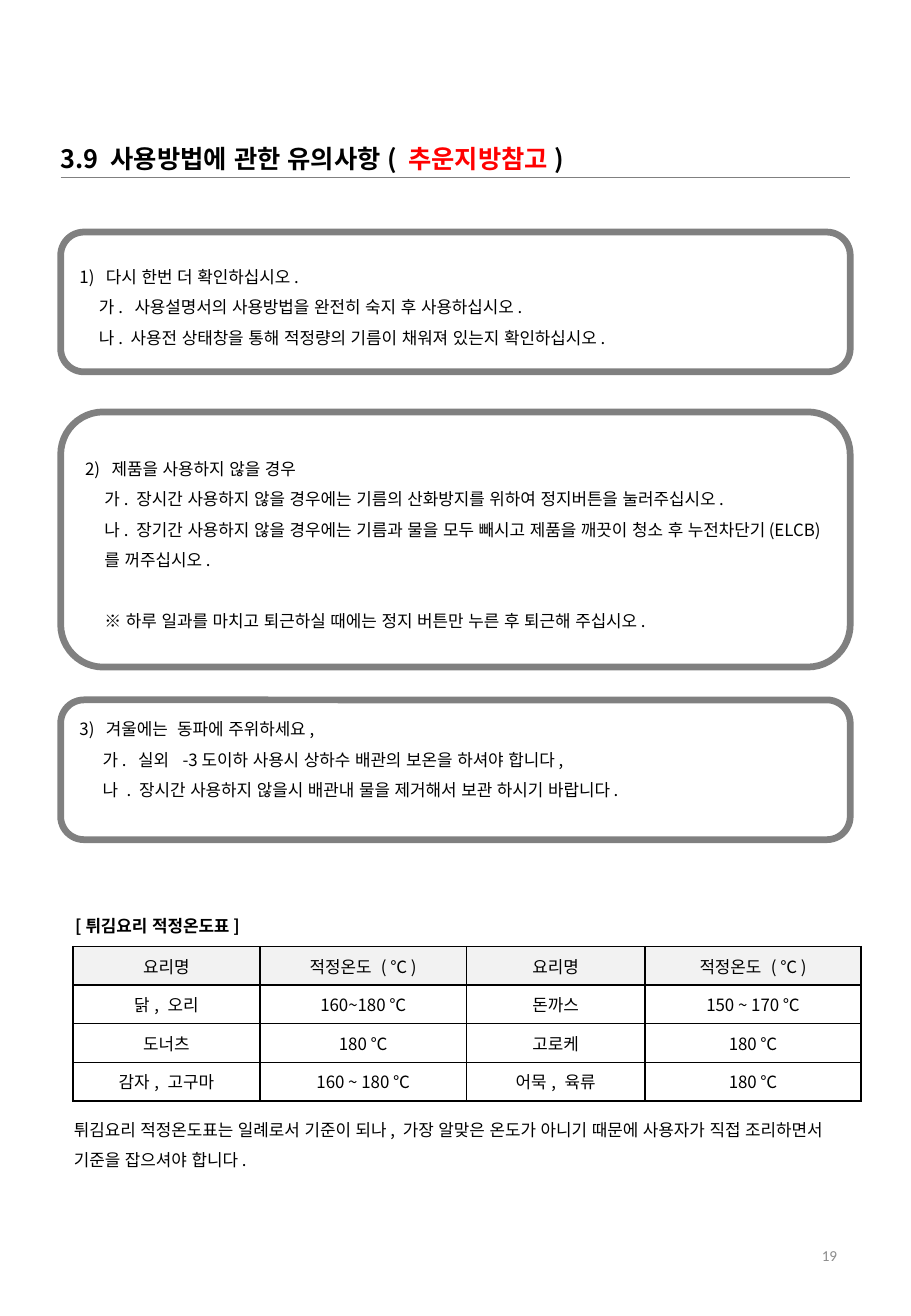
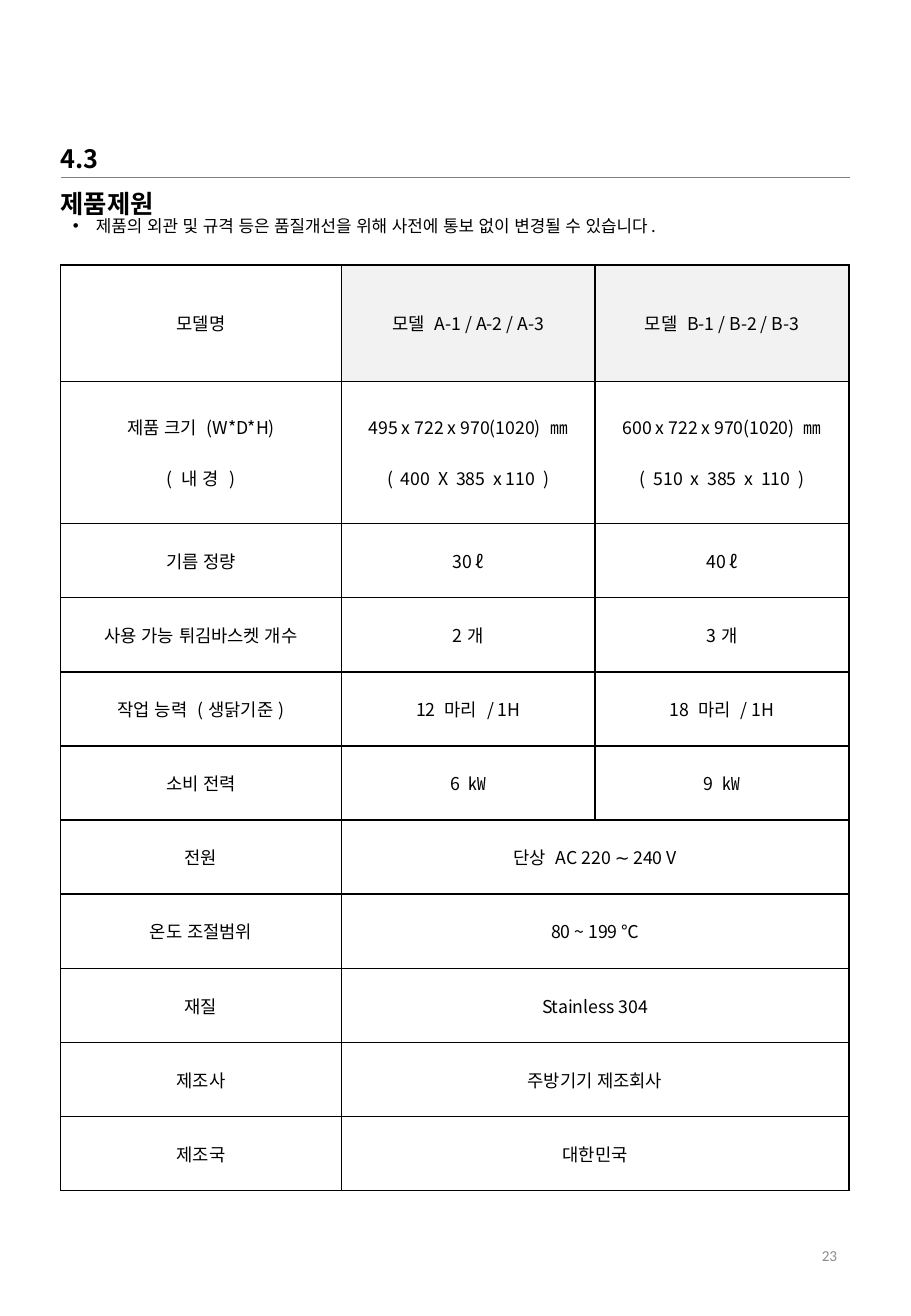
from pptx import Presentation
from pptx import util as u
from pptx.dml.color import RGBColor
from pptx.enum import dml, lang, shapes, text
from pptx.oxml import ns
from lxml import etree

COLORS = {"ink": "000000", "alert": "FF0000", "frame": "808080",
          "header": "F2F2F2", "number": "8C8C8C"}
KOREAN = "Noto Sans CJK KR"
LEFT, WIDTH = 0.5, 6.5
BODY = {"size": u.Pt(10), "name": KOREAN, "bold": False}
LABEL = {**BODY, "bold": True}
TITLE = {"size": u.Pt(15), "name": KOREAN, "bold": True}
SPEC = {**BODY, "size": u.Pt(10.5)}
NUMBER = {"size": u.Pt(9), "name": "Calibri", "bold": False}
ROOMY = {"line_spacing": 1.5, "alignment": text.PP_ALIGN.LEFT, "space_before": u.Pt(0)}
CENTRED = {"alignment": text.PP_ALIGN.CENTER}
MIDDLE = {"word_wrap": True, "vertical_anchor": text.MSO_ANCHOR.MIDDLE}
GROWING = {"word_wrap": True, "vertical_anchor": text.MSO_ANCHOR.TOP,
           "auto_size": text.MSO_AUTO_SIZE.SHAPE_TO_FIT_TEXT}
SUB = {"indent": 0.16}

NOTICES = [
    ((LEFT, 1.91, WIDTH, 1.15), 0.05, [
        ("1)  다시 한번 더 확인하십시오.", {}),
        ("가.  사용설명서의 사용방법을 완전히 숙지 후 사용하십시오.", SUB),
        ("나. 사용전 상태창을 통해 적정량의 기름이 채워져 있는지 확인하십시오.", SUB)]),
    ((LEFT, 3.39, WIDTH, 2.1), 0.05, [
        ("2)  제품을 사용하지 않을 경우", {}),
        ("가. 장시간 사용하지 않을 경우에는 기름의 산화방지를 위하여 정지버튼을 눌러주십시오.", SUB),
        ("나. 장기간 사용하지 않을 경우에는 기름과 물을 모두 빼시고 제품을 깨끗이 청소 후 "
         "누전차단기(ELCB)를 꺼주십시오.", SUB),
        ("※ 하루 일과를 마치고 퇴근하실 때에는 정지 버튼만 누른 후 퇴근해 주십시오.",
         {**SUB, "space_before": u.Pt(18)})]),
    ((LEFT, 5.76, WIDTH, 1.15), 0.3, [
        ("3)  겨울에는  동파에 주위하세요,", {}),
        ("가.  실외  -3도이하 사용시 상하수 배관의 보온을 하셔야 합니다,", {"indent": 0.19}),
        ("나 . 장시간 사용하지 않을시 배관내 물을 제거해서 보관 하시기 바랍니다.", {"indent": 0.19})]),
]
TEMPERATURES = [
    ["요리명", "적정온도 ( ℃ )"] * 2,
    ["닭, 오리", "160~180 ℃", "돈까스", "150 ~ 170 ℃"],
    ["도너츠", "180 ℃", "고로케", "180 ℃"],
    ["감자, 고구마", "160 ~ 180 ℃", "어묵, 육류", "180 ℃"],
]
SPECIFICATIONS = [
    ["모델명", "모델 A-1 / A-2 / A-3", "모델 B-1 / B-2 / B-3"],
    ["제품 크기 (W*D*H)\n( 내 경 )",
     "495 x 722 x 970(1020) ㎜\n(  400  X  385  x 110  )",
     "600 x 722 x 970(1020) ㎜\n(  510  x  385  x  110  )"],
    ["기름 정량", "30 ℓ", "40 ℓ"],
    ["사용 가능 튀김바스켓 개수", "2개", "3개"],
    ["작업 능력 (생닭기준)", "12 마리 / 1H", "18 마리 / 1H"],
    ["소비 전력", "6 ㎾", "9 ㎾"],
    ["전원", "단상 AC 220 ∼ 240 V"],
    ["온도 조절범위", "80 ~ 199 ℃"],
    ["재질", "Stainless 304"],
    ["제조사", "주방기기 제조회사"],
    ["제조국", "대한민국"],
]


def rgb(key):
    """Return the named colour."""
    return RGBColor.from_string(COLORS[key])


def inches(box):
    """Turn a box of numbers into lengths."""
    return [u.Inches(length) for length in box]


def apply(target, values):
    """Set every attribute named in a dict."""
    for name, value in values.items():
        setattr(target, name, value)


def add_span(para, words, font, color="ink"):
    """Add one run with its Latin and East Asian typeface."""
    span = para.add_run()
    span.text = words
    apply(span.font, {**font, "language_id": lang.MSO_LANGUAGE_ID.KOREAN})
    span.font.color.rgb = rgb(color)
    face = etree.SubElement(span._r.get_or_add_rPr(), ns.qn("a:ea"))
    face.set("typeface", font["name"])


def write(frame, paragraphs, font, layout, color="ink"):
    """Fill a text frame with paragraphs of text or coloured spans."""
    for index, (content, extra) in enumerate(paragraphs):
        para = frame.add_paragraph() if index else frame.paragraphs[0]
        values = {**layout, **extra}
        indent = values.pop("indent", 0)
        bullet = values.pop("bullet", None)
        apply(para, values)
        properties = para._p.get_or_add_pPr()
        properties.set("marL", str(u.Inches(indent)))
        properties.set("indent", str(-u.Inches(indent) if bullet else 0))
        if bullet:
            etree.SubElement(properties, ns.qn("a:buChar")).set("char", bullet)
        spans = [(content, color)] if isinstance(content, str) else content
        for words, shade in spans:
            add_span(para, words, font, shade)


def place(shape, box):
    """Move and size a placeholder."""
    apply(shape, dict(zip(("left", "top", "width", "height"), inches(box))))


def add_caption(page, box, words, font, layout, color="ink"):
    """Add a vertically centred text box."""
    frame = page.shapes.add_textbox(*inches(box)).text_frame
    apply(frame, MIDDLE)
    write(frame, [(words, {})], font, layout, color)


def start_page(deck, layout, title_box, spans, number, wrap):
    """Add a page with its title, rule and page number."""
    page = deck.slides.add_slide(deck.slide_layouts[layout])
    title = page.shapes.title
    place(title, title_box)
    apply(title.text_frame, {**GROWING, "word_wrap": wrap})
    write(title.text_frame, [(spans, {})], TITLE, ROOMY)
    rule = page.shapes.add_connector(
        shapes.MSO_CONNECTOR.STRAIGHT, *inches((LEFT, 1.46, LEFT + WIDTH, 1.46)))
    rule.line.color.rgb = rgb("frame")
    rule.line.width = u.Pt(1)
    etree.SubElement(rule._element.spPr, ns.qn("a:effectLst"))
    add_caption(page, (5.3, 10.04, 1.69, 0.58), number, NUMBER,
                {"alignment": text.PP_ALIGN.RIGHT}, "number")
    return page


def add_notice(page, box, bottom, paragraphs):
    """Add a rounded frame holding one group of instructions."""
    notice = page.shapes.add_shape(shapes.MSO_SHAPE.ROUNDED_RECTANGLE, *inches(box))
    notice.shadow.inherit = False
    notice.fill.background()
    notice.line.color.rgb = rgb("frame")
    notice.line.width = u.Pt(4)
    apply(notice.text_frame, {**MIDDLE, "margin_bottom": u.Inches(bottom)})
    write(notice.text_frame, paragraphs, BODY, ROOMY)


def add_borders(cell):
    """Draw a thin black line on each side of a cell."""
    properties = cell._tc.get_or_add_tcPr()
    for side in ("lnL", "lnR", "lnT", "lnB"):
        line = etree.SubElement(properties, ns.qn("a:" + side), w=str(u.Pt(1)))
        fill = etree.SubElement(line, ns.qn("a:solidFill"))
        etree.SubElement(fill, ns.qn("a:srgbClr"), val=COLORS["ink"])


def add_grid(page, box, widths, heights, rows, font, first_shaded):
    """Add a ruled table whose short rows merge their last cells."""
    table = page.shapes.add_table(len(rows), len(widths), *inches(box)).table
    apply(table, {"first_row": False, "horz_banding": False})
    for column, width in zip(table.columns, widths):
        column.width = u.Inches(width)
    for r, (row, height) in enumerate(zip(rows, heights)):
        table.rows[r].height = u.Inches(height)
        for c in range(len(widths)):
            cell = table.cell(r, c)
            add_borders(cell)
            if r == 0 and c >= first_shaded:
                cell.fill.solid()
                cell.fill.fore_color.rgb = rgb("header")
            else:
                cell.fill.background()
            cell.vertical_anchor = text.MSO_ANCHOR.MIDDLE
            if c < len(row):
                lines = [(words, {"space_before": u.Pt(15 if index else 0)})
                         for index, words in enumerate(row[c].split("\n"))]
                write(cell.text_frame, lines, font, CENTRED)
        if len(row) < len(widths):
            table.cell(r, len(row) - 1).merge(table.cell(r, len(widths) - 1))


def add_precautions(deck):
    """Build the page of precautions and frying temperatures."""
    spans = [("3.9 사용방법에 관한 유의사항( ", "ink"), ("추운지방참고", "alert"), (")", "ink")]
    page = start_page(deck, 5, (0.4, 1, 4.46, 0.44), spans, "19", True)
    for box, bottom, paragraphs in NOTICES:
        add_notice(page, box, bottom, paragraphs)
    add_caption(page, (0.52, 7.37, 6.65, 0.42), "[튀김요리 적정온도표]", LABEL, ROOMY)
    add_grid(page, (0.6, 7.79, WIDTH, 1.27), (1.54, 1.7, 1.47, 1.78),
             [1.27 / 4] * 4, TEMPERATURES, BODY, 0)
    add_caption(page, (0.51, 8.95, 6.61, 0.86),
                "튀김요리 적정온도표는 일례로서 기준이 되나, 가장 알맞은 온도가 아니기 때문에 "
                "사용자가 직접 조리하면서 기준을 잡으셔야 합니다.", BODY, ROOMY)


def add_specifications(deck):
    """Build the page of product specifications."""
    page = start_page(deck, 1, (0.4, 1, 1.37, 0.44), "4.3 제품제원", "23", False)
    remark = page.placeholders[1]
    place(remark, (LEFT, 1.64, WIDTH, 0.35))
    apply(remark.text_frame, GROWING)
    write(remark.text_frame,
          [("제품의 외관 및 규격 등은 품질개선을 위해 사전에 통보 없이 변경될 수 있습니다.",
            {"indent": 0.19, "bullet": "•"})], BODY, ROOMY)
    add_grid(page, (LEFT, 2.18, WIDTH, 7.61), (2.31, 2.09, 2.09),
             [0.96, 1.17] + [0.61] * 9, SPECIFICATIONS, SPEC, 1)


def main():
    """Build and save the deck."""
    deck = Presentation()
    deck.slide_width, deck.slide_height = inches((7.5, 10.83))
    add_precautions(deck)
    add_specifications(deck)
    deck.save("out.pptx")


if __name__ == "__main__":
    main()
